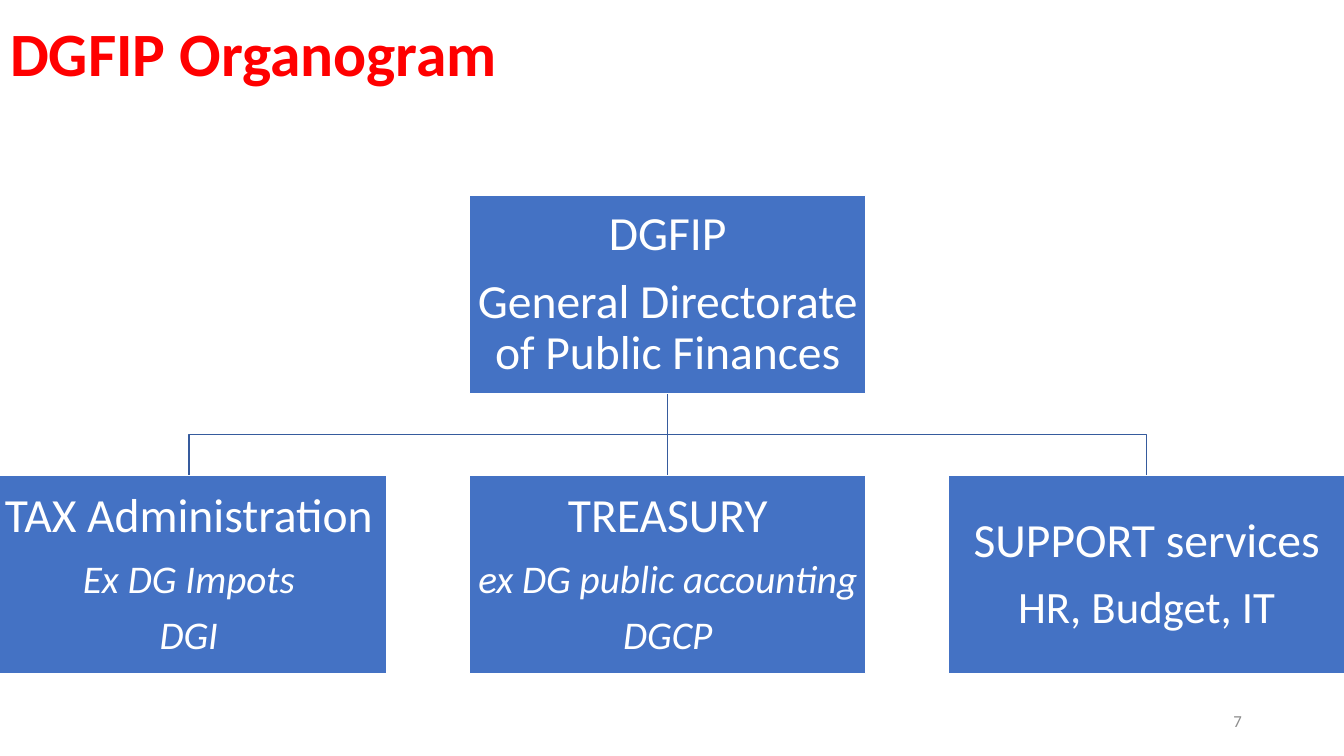
"""Build the DGFIP organogram slide: one directorate above three branches."""
from dataclasses import dataclass
from typing import Any

from lxml import etree
from pptx import Presentation, util as u
from pptx.dml import color
from pptx.enum import shapes, text
from pptx.oxml import ns


@dataclass(frozen=True)
class Theme:
    font: str = "Calibri"
    heading: color.RGBColor = color.RGBColor(0xFF, 0x00, 0x00)
    box: color.RGBColor = color.RGBColor(0x44, 0x72, 0xC4)
    branch: color.RGBColor = color.RGBColor(0x36, 0x5B, 0x9D)
    light: color.RGBColor = color.RGBColor(0xFF, 0xFF, 0xFF)
    muted: color.RGBColor = color.RGBColor(0x8C, 0x8C, 0x8C)
    heading_size: int = 44
    unit_size: int = 34
    detail_size: int = 32
    former_size: int = 28
    number_size: int = 12
    line_width: int = 1
    line_spacing: float = 0.9
    gap_ratio: float = 0.35


@dataclass(frozen=True)
class Line:
    words: str
    size: int
    italic: bool = False


@dataclass(frozen=True)
class Unit:
    column: int
    row: int
    lines: tuple[Line, ...]

    @property
    def left(self) -> float:
        return FIRST_LEFT + self.column * COLUMN_PITCH

    @property
    def top(self) -> float:
        return FIRST_TOP + self.row * ROW_PITCH

    @property
    def center(self) -> float:
        return self.left + BOX_WIDTH / 2


THEME = Theme()
BOX_WIDTH, BOX_HEIGHT = 9.98, 4.98
FIRST_LEFT, FIRST_TOP = -0.23, 4.93
COLUMN_PITCH, ROW_PITCH = 12.07, 7.06
INSET = 0.05

DIRECTORATE = Unit(1, 0, (
    Line("DGFIP", THEME.unit_size),
    Line("General Directorate of Public Finances", THEME.unit_size),
))
BRANCHES = (
    Unit(0, 1, (
        Line("TAX Administration", THEME.unit_size),
        Line("Ex DG Impots", THEME.former_size, True),
        Line("DGI", THEME.former_size, True),
    )),
    Unit(1, 1, (
        Line("TREASURY", THEME.unit_size),
        Line("ex DG public accounting", THEME.former_size, True),
        Line("DGCP", THEME.former_size, True),
    )),
    Unit(2, 1, (
        Line("SUPPORT services", THEME.unit_size),
        Line("HR, Budget, IT", THEME.detail_size),
    )),
)


def apply(target: Any, values: dict[str, Any]) -> None:
    for name, value in values.items():
        setattr(target, name, value)


def write(paragraph: Any, line: Line, ink: color.RGBColor,
          layout: dict[str, Any], bold: bool = False) -> None:
    apply(paragraph, layout)
    run = paragraph.add_run()
    run.text = line.words
    apply(run.font, {"name": THEME.font, "size": u.Pt(line.size),
                     "bold": bold, "italic": line.italic})
    run.font.color.rgb = ink


def outline(shape: Any, ink: color.RGBColor) -> None:
    shape.line.color.rgb = ink
    shape.line.width = u.Pt(THEME.line_width)


def draw_title(slide: Any) -> None:
    title = slide.shapes.title
    apply(title, {"left": u.Cm(0), "top": u.Cm(0),
                  "width": u.Cm(31.55), "height": u.Cm(2.84)})
    apply(title.text_frame, {"auto_size": text.MSO_AUTO_SIZE.NONE,
                             "vertical_anchor": text.MSO_ANCHOR.MIDDLE})
    write(title.text_frame.paragraphs[0],
          Line("DGFIP Organogram", THEME.heading_size), THEME.heading,
          {"alignment": text.PP_ALIGN.LEFT, "line_spacing": THEME.line_spacing},
          bold=True)


def draw_branch_line(slide: Any, parent: Unit, child: Unit) -> None:
    start, end = parent.top + BOX_HEIGHT, child.top
    if parent.column == child.column:
        link = slide.shapes.add_connector(
            shapes.MSO_CONNECTOR.STRAIGHT, u.Cm(parent.center), u.Cm(start),
            u.Cm(child.center), u.Cm(end))
        outline(link, THEME.branch)
        etree.SubElement(link._element.spPr, ns.qn("a:effectLst"))
        return
    bend = (start + end) / 2
    corners = ((parent.center, bend), (child.center, bend), (child.center, end))
    builder = slide.shapes.build_freeform(u.Cm(parent.center), u.Cm(start))
    builder.add_line_segments([(u.Cm(x), u.Cm(y)) for x, y in corners], close=False)
    link = builder.convert_to_shape()
    link.fill.background()
    link.shadow.inherit = False
    outline(link, THEME.branch)


def draw_unit(slide: Any, unit: Unit) -> None:
    box = slide.shapes.add_shape(
        shapes.MSO_SHAPE.RECTANGLE, u.Cm(unit.left), u.Cm(unit.top),
        u.Cm(BOX_WIDTH), u.Cm(BOX_HEIGHT))
    box.shadow.inherit = False
    box.fill.solid()
    box.fill.fore_color.rgb = THEME.box
    outline(box, THEME.light)
    frame = box.text_frame
    apply(frame, {f"margin_{side}": u.Cm(INSET)
                  for side in ("left", "top", "right", "bottom")})
    apply(frame, {"word_wrap": True, "vertical_anchor": text.MSO_ANCHOR.MIDDLE})
    for index, line in enumerate(unit.lines):
        paragraph = frame.add_paragraph() if index else frame.paragraphs[0]
        write(paragraph, line, THEME.light, {
            "alignment": text.PP_ALIGN.CENTER,
            "line_spacing": THEME.line_spacing,
            "space_after": u.Pt(round(line.size * THEME.gap_ratio))})


def draw_page_number(slide: Any) -> None:
    page_number = slide.shapes.add_textbox(
        u.Cm(23.93), u.Cm(17.65), u.Cm(7.62), u.Cm(1.02))
    apply(page_number.text_frame, {"word_wrap": True,
                                   "vertical_anchor": text.MSO_ANCHOR.MIDDLE})
    write(page_number.text_frame.paragraphs[0], Line("7", THEME.number_size),
          THEME.muted, {"alignment": text.PP_ALIGN.RIGHT})


def main() -> None:
    deck = Presentation()
    apply(deck, {"slide_width": u.Cm(33.87), "slide_height": u.Cm(19.05)})
    slide = deck.slides.add_slide(deck.slide_layouts.get_by_name("Title Only"))
    draw_title(slide)
    for branch in BRANCHES:
        draw_branch_line(slide, DIRECTORATE, branch)
    for unit in (DIRECTORATE, *BRANCHES):
        draw_unit(slide, unit)
    draw_page_number(slide)
    deck.save("out.pptx")


if __name__ == "__main__":
    main()
